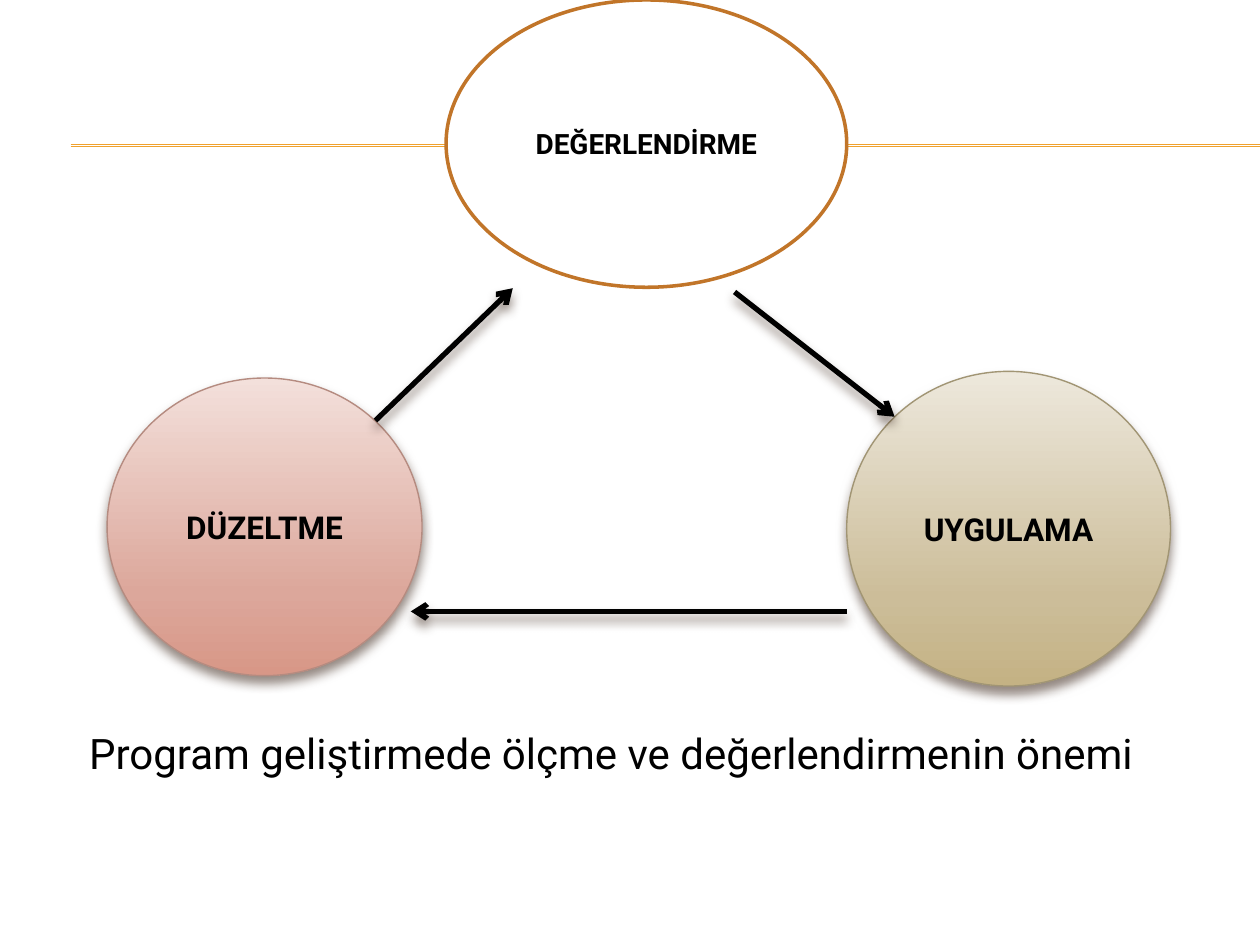
import pptx
import pptx.dml.color
import pptx.enum.shapes
import pptx.enum.text
import pptx.oxml.ns
import pptx.util
import lxml.etree

qn = pptx.oxml.ns.qn
rgb = pptx.dml.color.RGBColor.from_string

deck = pptx.Presentation()
deck.slide_width = pptx.util.Inches(10)
deck.slide_height = pptx.util.Inches(7.5)
slide = deck.slides.add_slide(deck.slide_layouts[6])

# Positions are percentages of the slide's width and height
column = deck.slide_width / 100
row = deck.slide_height / 100


def add_line(start, end, color, width):
    line = slide.shapes.add_connector(
        pptx.enum.shapes.MSO_CONNECTOR.STRAIGHT,
        int(start[0] * column), int(start[1] * row),
        int(end[0] * column), int(end[1] * row))
    line.line.color.rgb = rgb(color)
    line.line.width = pptx.util.Pt(width)
    effects = lxml.etree.SubElement(line._element.spPr, qn("a:effectLst"))
    return line, effects


def add_shadow(effects):
    shadow = lxml.etree.SubElement(
        effects, qn("a:outerShdw"), blurRad=str(pptx.util.Pt(6)),
        dist=str(pptx.util.Pt(4)), dir="5400000", rotWithShape="0")
    tint = lxml.etree.SubElement(shadow, qn("a:srgbClr"), val="4E3B30")
    lxml.etree.SubElement(tint, qn("a:alpha"), val="60000")


# Double rule behind the top ellipse
for height in (15.33, 15.47):
    add_line((5.6, height), (100, height), "F0A22E", 0.75)

# Stages: label, left, top, width, height, fill colours, outline, line width, text size
stages = [
    ("DÜZELTME", 8.5, 40, 25, 31.5, ("F3E0DB", "DCA79B", "D89787"), "B58B80", 0.79, 18),
    ("DEĞERLENDİRME", 35.4, 0, 31.8, 30.4, ("FFFFFF",), "C17529", 2, 16),
    ("UYGULAMA", 67.2, 39.3, 25.7, 33.3, ("EDE8DC", "CCBD99", "C4B284"), "A19574", 0.79, 18),
]
for label, left, top, width, height, colors, outline, line_width, size in stages:
    stage = slide.shapes.add_shape(
        pptx.enum.shapes.MSO_SHAPE.OVAL, int(left * column), int(top * row),
        int(width * column), int(height * row))
    stage.line.color.rgb = rgb(outline)
    stage.line.width = pptx.util.Pt(line_width)
    stage.shadow.inherit = False
    if len(colors) == 1:
        stage.fill.solid()
        stage.fill.fore_color.rgb = rgb(colors[0])
    else:
        stage.fill.gradient()
        stage.fill.gradient_angle = 270
        stops = stage._element.spPr.find(".//" + qn("a:gsLst"))
        for stop in list(stops):
            stops.remove(stop)
        for share, color in zip((0, 72, 100), colors):
            stop = lxml.etree.SubElement(stops, qn("a:gs"), pos=str(share * 1000))
            lxml.etree.SubElement(stop, qn("a:srgbClr"), val=color)
        add_shadow(stage._element.spPr.find(qn("a:effectLst")))
    stage.text_frame.vertical_anchor = pptx.enum.text.MSO_ANCHOR.MIDDLE
    name = stage.text_frame.paragraphs[0]
    name.text = label
    name.alignment = pptx.enum.text.PP_ALIGN.CENTER
    name.font.name = "Roboto"
    name.font.size = pptx.util.Pt(size)
    name.font.bold = True
    name.font.color.rgb = rgb("000000")

# Arrows of the cycle
for start, end in [((58.3, 30.9), (71, 44.1)),
                   ((29.8, 44.5), (40.7, 30.5)),
                   ((67.2, 64.7), (32.6, 64.7))]:
    arrow, effects = add_line(start, end, "000000", 3)
    lxml.etree.SubElement(arrow.line._get_or_add_ln(), qn("a:tailEnd"), type="arrow")
    add_shadow(effects)

# Caption
caption_box = slide.shapes.add_textbox(
    int(4 * column), int(76.3 * row), int(89 * column), int(12.1 * row))
caption_box.text_frame.word_wrap = True
caption = caption_box.text_frame.paragraphs[0]
caption.text = "Program geliştirmede ölçme ve değerlendirmenin önemi"
caption.alignment = pptx.enum.text.PP_ALIGN.CENTER
caption.font.name = "Roboto"
caption.font.size = pptx.util.Pt(24)
caption.font.color.rgb = rgb("000000")

deck.save("out.pptx")
